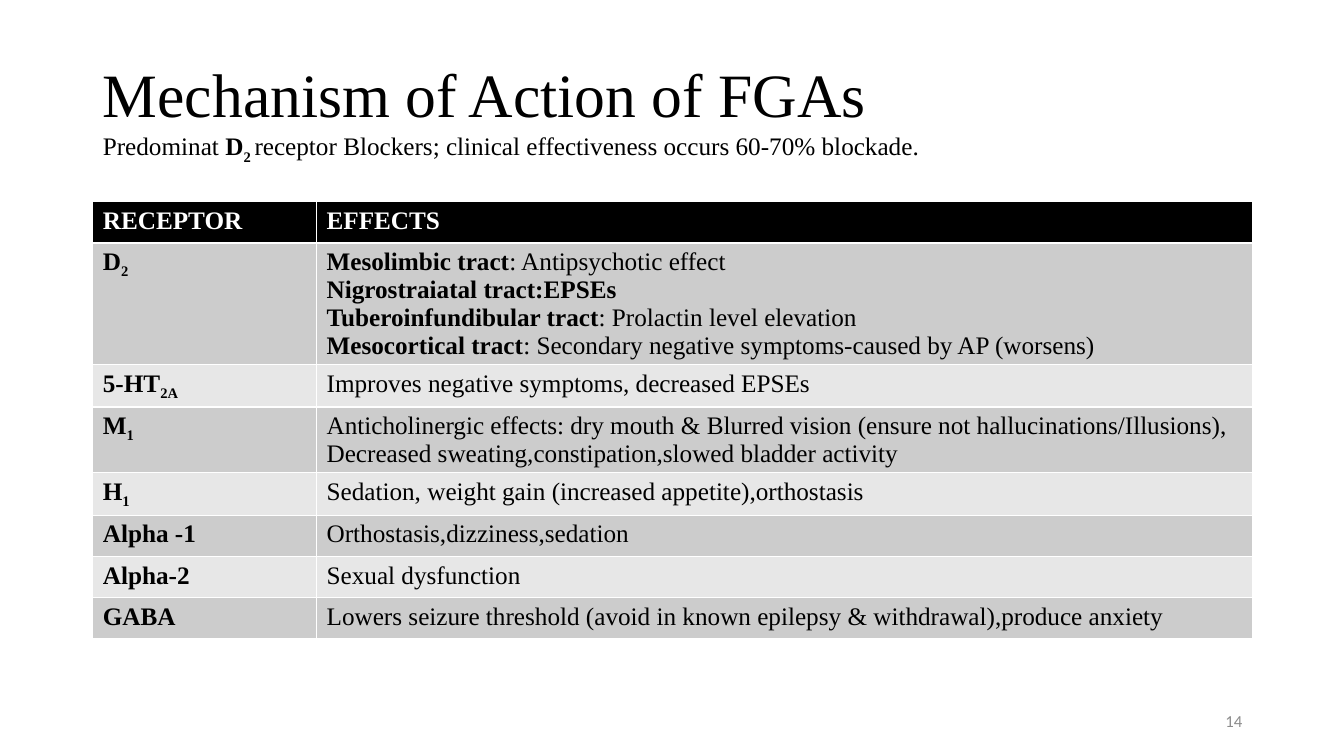
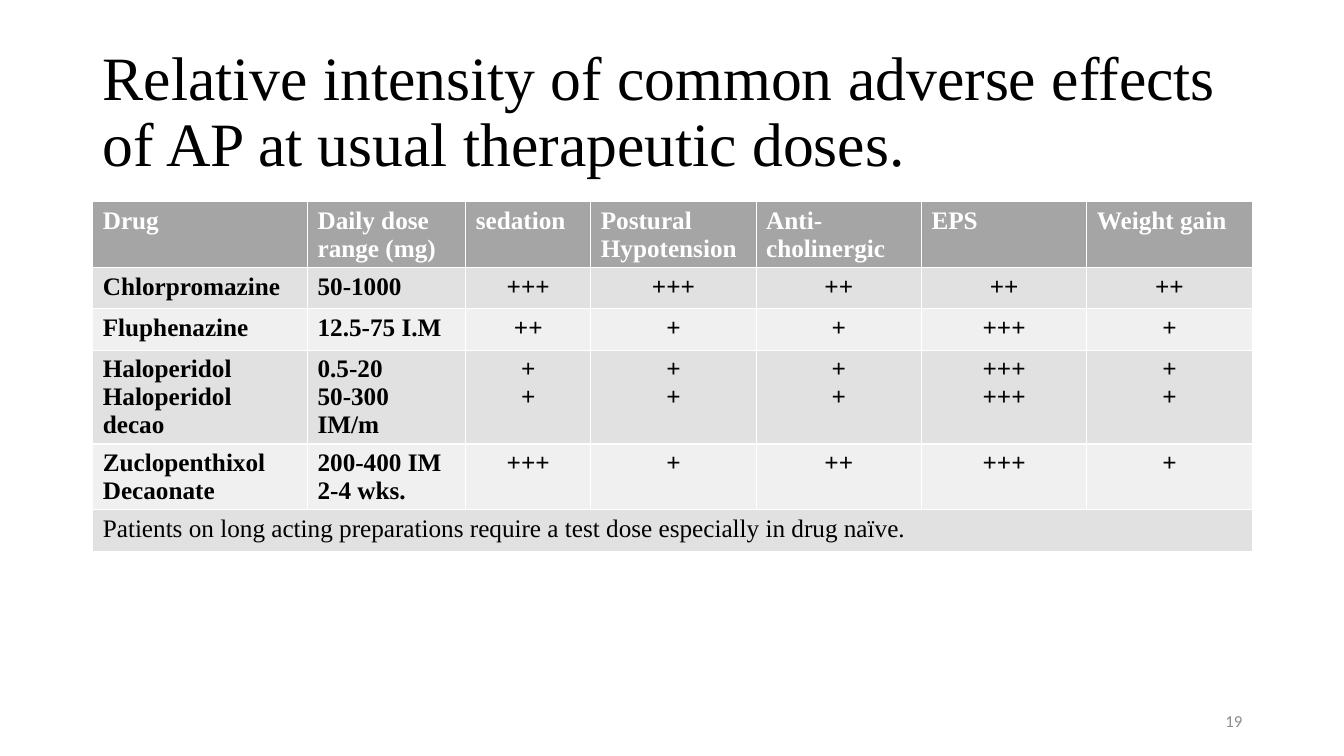
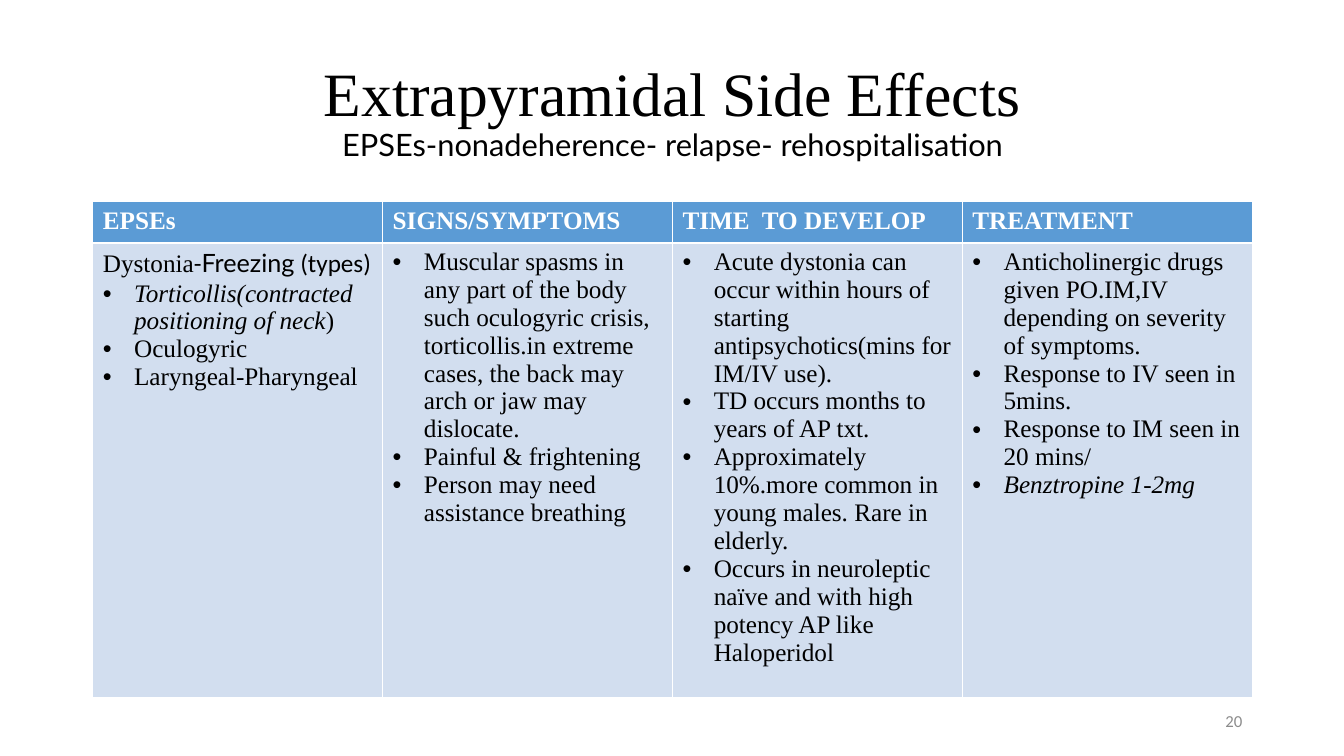
import pptx
import pptx.util
import pptx.oxml
import pptx.oxml.ns
from pptx.dml.color import RGBColor
from pptx.enum.text import MSO_ANCHOR, MSO_AUTO_SIZE, PP_ALIGN
from pptx.util import Inches

BLACK = RGBColor(0x00, 0x00, 0x00)
WHITE = RGBColor(0xFF, 0xFF, 0xFF)
NUMBER_GRAY = RGBColor(0x8C, 0x8C, 0x8C)
DARK_BAND = RGBColor(0xCC, 0xCC, 0xCC)
LIGHT_BAND = RGBColor(0xE7, 0xE7, 0xE7)
GRAY_HEAD = RGBColor(0xA5, 0xA5, 0xA5)
GRAY_BAND = RGBColor(0xE1, 0xE1, 0xE1)
PALE_BAND = RGBColor(0xF0, 0xF0, 0xF0)
BLUE_HEAD = RGBColor(0x5B, 0x9B, 0xD5)
BLUE_BAND = RGBColor(0xD2, 0xDE, 0xEF)
SERIF = "Times New Roman"
LEFT, WIDTH = 0.92, 11.5


def add_text(p, content, size, color, bold=False, font=SERIF):
    p.font.name = font
    p.font.size = pptx.util.Pt(size)
    p.font.color.rgb = color
    p.font.bold = bold
    runs = [(content, "")] if isinstance(content, str) else content
    for text, flags, *fonts in runs:
        r = p.add_run()
        r.text = text
        if "b" in flags:
            r.font.bold = True
        if "i" in flags:
            r.font.italic = True
        if "s" in flags:
            r.font._element.set("baseline", "-25000")
        if fonts:
            r.font.name = fonts[0]


def add_grid(s, widths, heights, rows, head, bands, bold_cols, centre_from, bullets):
    frame = s.shapes.add_table(len(rows), len(widths), Inches(LEFT), Inches(2),
                               Inches(WIDTH), Inches(sum(heights)))
    table = frame.table
    table.horz_banding = False
    for column, width in zip(table.columns, widths):
        column.width = Inches(width)
    for i, (row, height) in enumerate(zip(rows, heights)):
        table.rows[i].height = Inches(height)
        spans = len(row) < len(widths)
        for cell in table.rows[i].cells:
            cell.fill.solid()
            cell.fill.fore_color.rgb = head if i == 0 else bands[(i - 1) % len(bands)]
        if spans:
            table.cell(i, 0).merge(table.cell(i, len(widths) - 1))
        for j, content in enumerate(row):
            tf = table.cell(i, j).text_frame
            paragraphs = content if isinstance(content, list) else [content]
            for k, paragraph in enumerate(paragraphs):
                p = tf.add_paragraph() if k else tf.paragraphs[0]
                bold = i == 0 or (j < bold_cols and not spans)
                add_text(p, paragraph, 18, BLACK if i else WHITE, bold)
                if i and j >= centre_from:
                    p.alignment = PP_ALIGN.CENTER
                if bullets and i and (j or k):
                    pPr = p._p.get_or_add_pPr()
                    pPr.set("marL", str(Inches(0.31)))
                    pPr.set("indent", str(Inches(-0.31)))
                    for offset, tag, key, value in ((0, "a:buFont", "typeface", "Arial"),
                                                    (1, "a:buChar", "char", "•")):
                        bullet = pptx.oxml.parse_xml(
                            f'<{tag} {pptx.oxml.ns.nsdecls("a")} {key}="{value}"/>')
                        pPr.insert(offset, bullet)


receptor_rows = [
    ["RECEPTOR", "EFFECTS"],
    [(("D", ""), ("2", "s")), [
        (("Mesolimbic tract", "b"), (": Antipsychotic effect", "")),
        (("Nigrostraiatal tract:EPSEs", "b"),),
        (("Tuberoinfundibular tract", "b"), (": Prolactin level elevation", "")),
        (("Mesocortical tract", "b"),
         (": Secondary negative symptoms-caused by AP (worsens)", ""))]],
    [(("5-HT", ""), ("2A", "s")), "Improves negative symptoms, decreased EPSEs"],
    [(("M", ""), ("1", "s")), [
        "Anticholinergic effects: dry mouth & Blurred vision (ensure not hallucinations/Illusions),",
        "Decreased sweating,constipation,slowed bladder activity"]],
    [(("H", ""), ("1", "s")), "Sedation, weight gain (increased appetite),orthostasis"],
    ["Alpha -1", "Orthostasis,dizziness,sedation"],
    ["Alpha-2", "Sexual dysfunction"],
    ["GABA", "Lowers seizure threshold (avoid in known epilepsy & withdrawal),produce anxiety"],
]

dose_rows = [
    ["Drug", "Daily dose range (mg)", "sedation", "Postural Hypotension",
     ["Anti-", "cholinergic"], "EPS", "Weight gain"],
    ["Chlorpromazine", "50-1000", "+++", "+++", "++", "++", "++"],
    ["Fluphenazine", "12.5-75 I.M", "++", "+", "+", "+++", "+"],
    [["Haloperidol", "Haloperidol decao"], ["0.5-20", "50-300 IM/m"],
     ["+", "+"], ["+", "+"], ["+", "+"], ["+++", "+++"], ["+", "+"]],
    [["Zuclopenthixol", "Decaonate"], ["200-400 IM", "2-4 wks."],
     "+++", "+", "++", "+++", "+"],
    ["Patients on long acting preparations require a test dose especially in drug naïve."],
]

epse_rows = [
    ["EPSEs", "SIGNS/SYMPTOMS", "TIME  TO DEVELOP", "TREATMENT"],
    [
        [(("Dystonia", ""), ("-", "", "Calibri"), ("Freezing", "", "Lato"),
          (" (types)", "", "Calibri")),
         (("Torticollis(contracted positioning of neck", "i"), (")", "")),
         "Oculogyric",
         "Laryngeal-Pharyngeal"],
        ["Muscular spasms in any part of the body such oculogyric crisis, torticollis.in "
         "extreme cases, the back may arch or jaw may dislocate.",
         "Painful & frightening",
         "Person may need assistance breathing"],
        ["Acute dystonia can occur within hours of starting antipsychotics(mins for IM/IV use).",
         "TD occurs months to years of AP txt.",
         "Approximately 10%.more common in young males. Rare in elderly.",
         "Occurs in neuroleptic naïve and with high potency AP like Haloperidol"],
        ["Anticholinergic drugs given PO.IM,IV depending on severity of symptoms.",
         "Response to IV seen in 5mins.",
         "Response to IM seen in 20 mins/",
         (("Benztropine 1-2mg", "i"),)],
    ],
]

slides = [
    dict(number="14", title="Mechanism of Action of FGAs", align=PP_ALIGN.LEFT, sub_size=18,
         subtitle=(("Predominat ", ""), ("D", "b"), ("2 ", "bs"),
                   ("receptor Blockers; clinical effectiveness occurs 60-70% blockade.", "")),
         grid=dict(widths=[2.22, 9.28], rows=receptor_rows,
                   heights=[0.41, 1.2, 0.42, 0.65, 0.42, 0.41, 0.41, 0.41],
                   head=BLACK, bands=[DARK_BAND, LIGHT_BAND],
                   bold_cols=1, centre_from=2, bullets=False)),
    dict(number="19", align=PP_ALIGN.LEFT, sub_size=18, subtitle=(),
         title="Relative intensity of common adverse effects of AP at usual therapeutic doses.",
         grid=dict(widths=[2.13, 1.57, 1.24] + [1.64] * 4, rows=dose_rows,
                   heights=[0.65, 0.41, 0.41, 0.93, 0.65, 0.41],
                   head=GRAY_HEAD, bands=[GRAY_BAND, PALE_BAND],
                   bold_cols=7, centre_from=2, bullets=False)),
    dict(number="20", title="Extrapyramidal Side Effects", align=PP_ALIGN.CENTER, sub_size=22,
         subtitle=(("EPSEs-nonadeherence- relapse- rehospitalisation", "", "Lato"),),
         grid=dict(widths=[WIDTH / 4] * 4, rows=epse_rows, heights=[0.41, 4.51],
                   head=BLUE_HEAD, bands=[BLUE_BAND],
                   bold_cols=0, centre_from=4, bullets=True)),
]

prs = pptx.Presentation()
prs.slide_width, prs.slide_height = Inches(13.33), Inches(7.5)

for slide in slides:
    s = prs.slides.add_slide(prs.slide_layouts[5])
    sp = s.shapes.title
    sp.left, sp.top, sp.width, sp.height = Inches(LEFT), Inches(0.4), Inches(WIDTH), Inches(1.45)
    tf = sp.text_frame
    tf.auto_size = MSO_AUTO_SIZE.NONE
    tf.vertical_anchor = MSO_ANCHOR.MIDDLE
    p = tf.paragraphs[0]
    p.alignment = slide["align"]
    p.line_spacing = 0.9
    add_text(p, slide["title"], 44, BLACK)
    if slide["subtitle"]:
        p.add_line_break()
        add_text(p, slide["subtitle"], 44, BLACK)
        for r in p.runs[1:]:
            r.font.size = pptx.util.Pt(slide["sub_size"])

    add_grid(s, **slide["grid"])

    sp = s.shapes.add_textbox(Inches(9.42), Inches(6.95), Inches(3), Inches(0.4))
    tf = sp.text_frame
    tf.word_wrap = True
    tf.vertical_anchor = MSO_ANCHOR.MIDDLE
    p = tf.paragraphs[0]
    p.alignment = PP_ALIGN.RIGHT
    add_text(p, slide["number"], 12, NUMBER_GRAY, font="Calibri")

prs.save("out.pptx")
